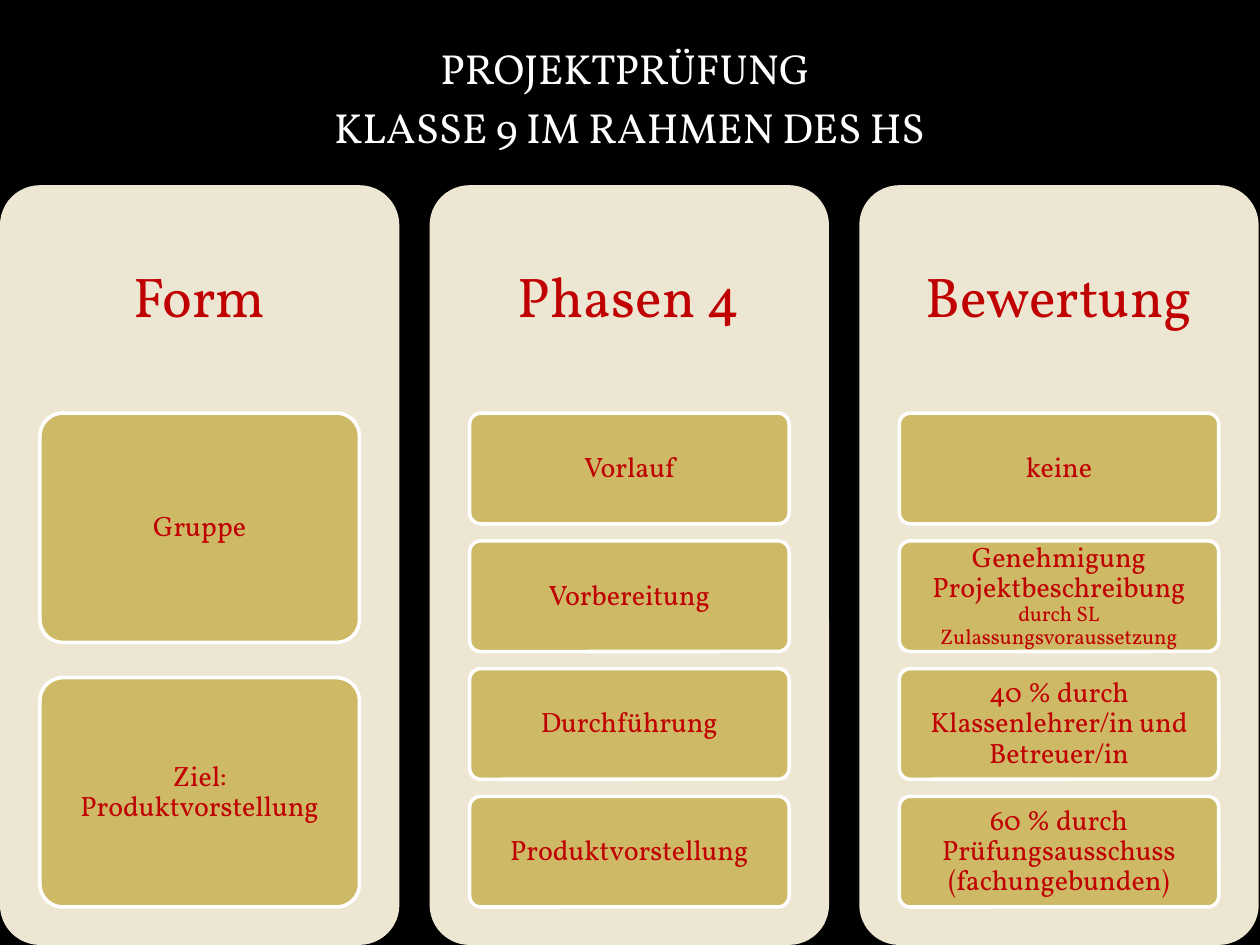
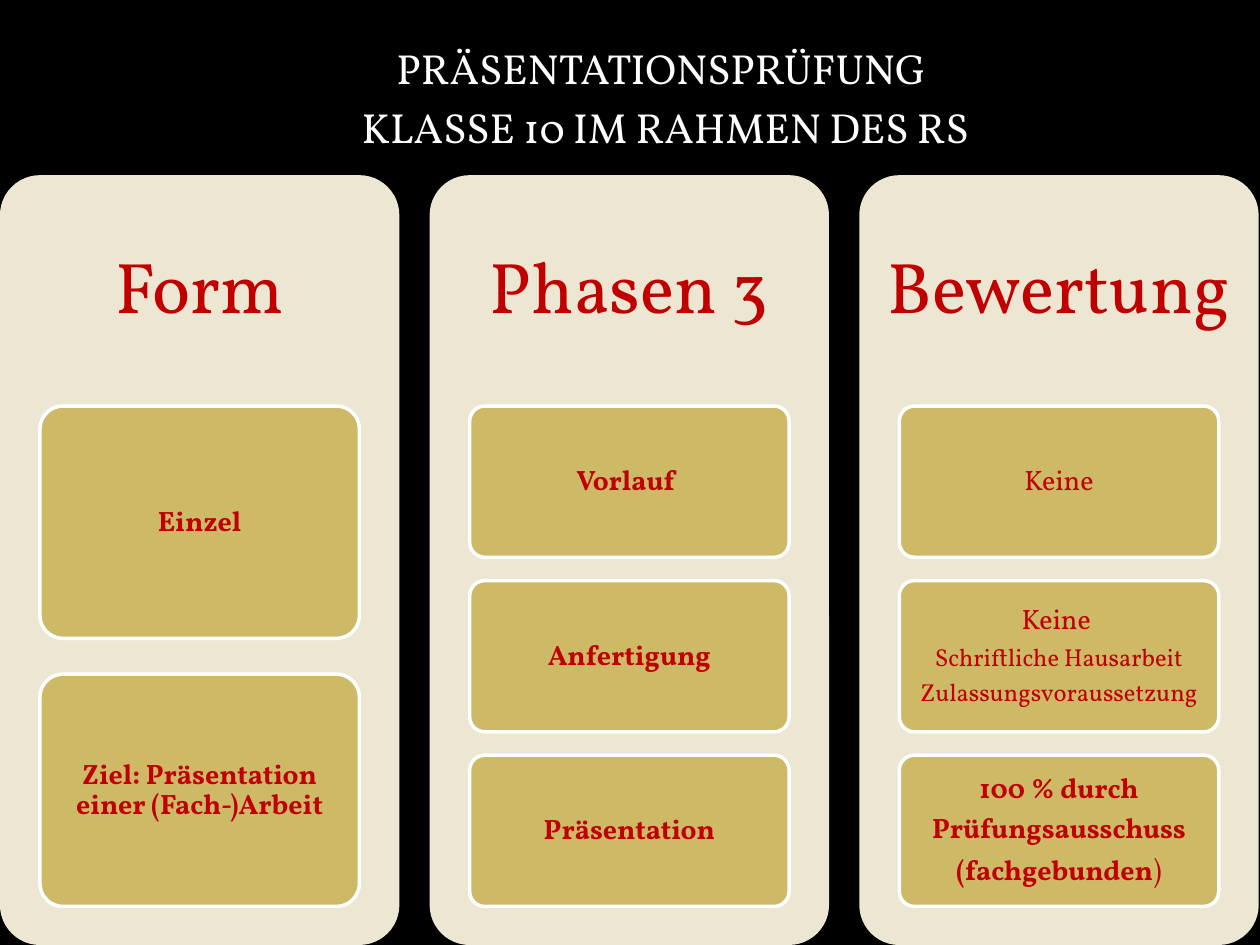
from dataclasses import dataclass
from pptx import Presentation
from pptx import util as u
from pptx.dml.color import RGBColor
from pptx.enum import shapes, text

FONT = "Vollkorn"
BLACK, WHITE, RED = "000000", "FFFFFF", "C00000"
CREAM, GOLD = "EDE6D3", "CEB966"
SLIDE_WIDTH, SLIDE_HEIGHT = 10, 7.5
COLUMN_WIDTH, COLUMN_PITCH = 3.17, 3.41
HEADING_SHARE, CARDS_SHARE = 0.3, 0.65
CARD_GAP_RATIO = 2 / 13


@dataclass
class Run:
    text: str
    size: int = 16
    bold: bool = False


def color(value):
    return RGBColor.from_string(value)


def bold(content):
    return [[Run(content, bold=True)]]


def plain(content):
    return [[Run(content)]]


class Deck:
    def __init__(self):
        self.presentation = Presentation()
        self.presentation.slide_width = u.Inches(SLIDE_WIDTH)
        self.presentation.slide_height = u.Inches(SLIDE_HEIGHT)
        self.slide = None

    def add_slide(self):
        self.slide = self.presentation.slides.add_slide(self.presentation.slide_layouts[6])
        fill = self.slide.background.fill
        fill.solid()
        fill.fore_color.rgb = color(BLACK)

    def set_text(self, shape, paragraphs, font_color, frame_format=None, before=0.0, after=0.0, spacing=1.0):
        frame = shape.text_frame
        frame.word_wrap = True
        for name, value in (frame_format or {}).items():
            setattr(frame, name, value)
        for index, runs in enumerate(paragraphs):
            paragraph = frame.paragraphs[0] if index == 0 else frame.add_paragraph()
            size = runs[0].size
            paragraph_format = {
                "alignment": text.PP_ALIGN.CENTER,
                "line_spacing": spacing,
                "space_before": u.Pt(size * before),
                "space_after": u.Pt(size * after),
            }
            for name, value in paragraph_format.items():
                setattr(paragraph, name, value)
            for item in runs:
                run = paragraph.add_run()
                run.text = item.text
                font_format = {"name": FONT, "size": u.Pt(item.size), "bold": item.bold}
                for name, value in font_format.items():
                    setattr(run.font, name, value)
                run.font.color.rgb = color(font_color)

    def text_box(self, left, top, width, height):
        return self.slide.shapes.add_textbox(*map(u.Inches, (left, top, width, height)))

    def rounded(self, left, top, width, height, fill, line=None):
        shape = self.slide.shapes.add_shape(
            shapes.MSO_SHAPE.ROUNDED_RECTANGLE, *map(u.Inches, (left, top, width, height)))
        shape.adjustments[0] = 0.1
        shape.shadow.inherit = False
        shape.fill.solid()
        shape.fill.fore_color.rgb = color(fill)
        if line:
            shape.line.color.rgb = color(line)
            shape.line.width = u.Pt(2)
        else:
            shape.line.fill.background()
        return shape

    def title(self, left, width, lines):
        box = self.text_box(left, 0.29, width, 0.99)
        self.set_text(box, [[Run(line, 24)] for line in lines], WHITE, before=0.2)

    def centred(self, shape, paragraphs, side, end):
        frame_format = {
            "vertical_anchor": text.MSO_ANCHOR.MIDDLE,
            "margin_left": u.Inches(side),
            "margin_right": u.Inches(side),
            "margin_top": u.Inches(end),
            "margin_bottom": u.Inches(end),
        }
        self.set_text(shape, paragraphs, RED, frame_format, after=0.35, spacing=0.9)

    def column(self, left, top, heading, heading_size, heading_margin, cards):
        height = SLIDE_HEIGHT - top
        self.rounded(left, top, COLUMN_WIDTH, height, CREAM)
        box = self.text_box(left, top, COLUMN_WIDTH, HEADING_SHARE * height)
        self.centred(box, [[Run(heading, heading_size)]], heading_margin, heading_margin)
        count = len(cards)
        card_height = CARDS_SHARE * height / (count + (count - 1) * CARD_GAP_RATIO)
        for index, paragraphs in enumerate(cards):
            card_top = top + HEADING_SHARE * height + index * card_height * (1 + CARD_GAP_RATIO)
            card = self.rounded(left + 0.1 * COLUMN_WIDTH, card_top,
                                0.8 * COLUMN_WIDTH, card_height, GOLD, WHITE)
            self.centred(card, paragraphs, 0.04, 0.03)

    def columns(self, top, heading_size, heading_margin, contents):
        for index, (heading, cards) in enumerate(contents.items()):
            self.column(index * COLUMN_PITCH, top, heading, heading_size, heading_margin, cards)


def project_exam(deck):
    deck.add_slide()
    deck.title(0.43, 9.13, ["PROJEKTPRÜFUNG ", "KLASSE 9 IM RAHMEN DES HS"])
    phases = ["Vorlauf", "Vorbereitung", "Durchführung", "Produktvorstellung"]
    deck.columns(1.47, 32, 0.13, {
        "Form": [plain("Gruppe"), plain("Ziel: Produktvorstellung")],
        "Phasen 4": [plain(phase) for phase in phases],
        "Bewertung": [
            plain("keine"),
            [[Run("Genehmigung Projektbeschreibung "),
              Run("durch SL Zulassungsvoraussetzung", 12)]],
            plain("40 % durch Klassenlehrer/in und Betreuer/in"),
            plain("60 % durch Prüfungsausschuss (fachungebunden)"),
        ],
    })


def presentation_exam(deck):
    deck.add_slide()
    deck.title(0.83, 8.9, ["PRÄSENTATIONSPRÜFUNG ", "KLASSE 10 IM RAHMEN DES RS"])
    deck.columns(1.39, 41, 0.17, {
        "Form": [bold("Einzel"), bold("Ziel: Präsentation einer (Fach-)Arbeit")],
        "Phasen 3": [bold(phase) for phase in ("Vorlauf ", "Anfertigung", "Präsentation")],
        "Bewertung": [
            plain("Keine"),
            [[Run("Keine ")],
             [Run("Schriftliche Hausarbeit", 14)],
             [Run("Zulassungsvoraussetzung", 14)]],
            [[Run("100 % durch", bold=True)],
             [Run("Prüfungsausschuss", bold=True)],
             [Run("(fachgebunden", bold=True), Run(")", 17)]],
        ],
    })


def main():
    deck = Deck()
    project_exam(deck)
    presentation_exam(deck)
    deck.presentation.save("out.pptx")


if __name__ == "__main__":
    main()
